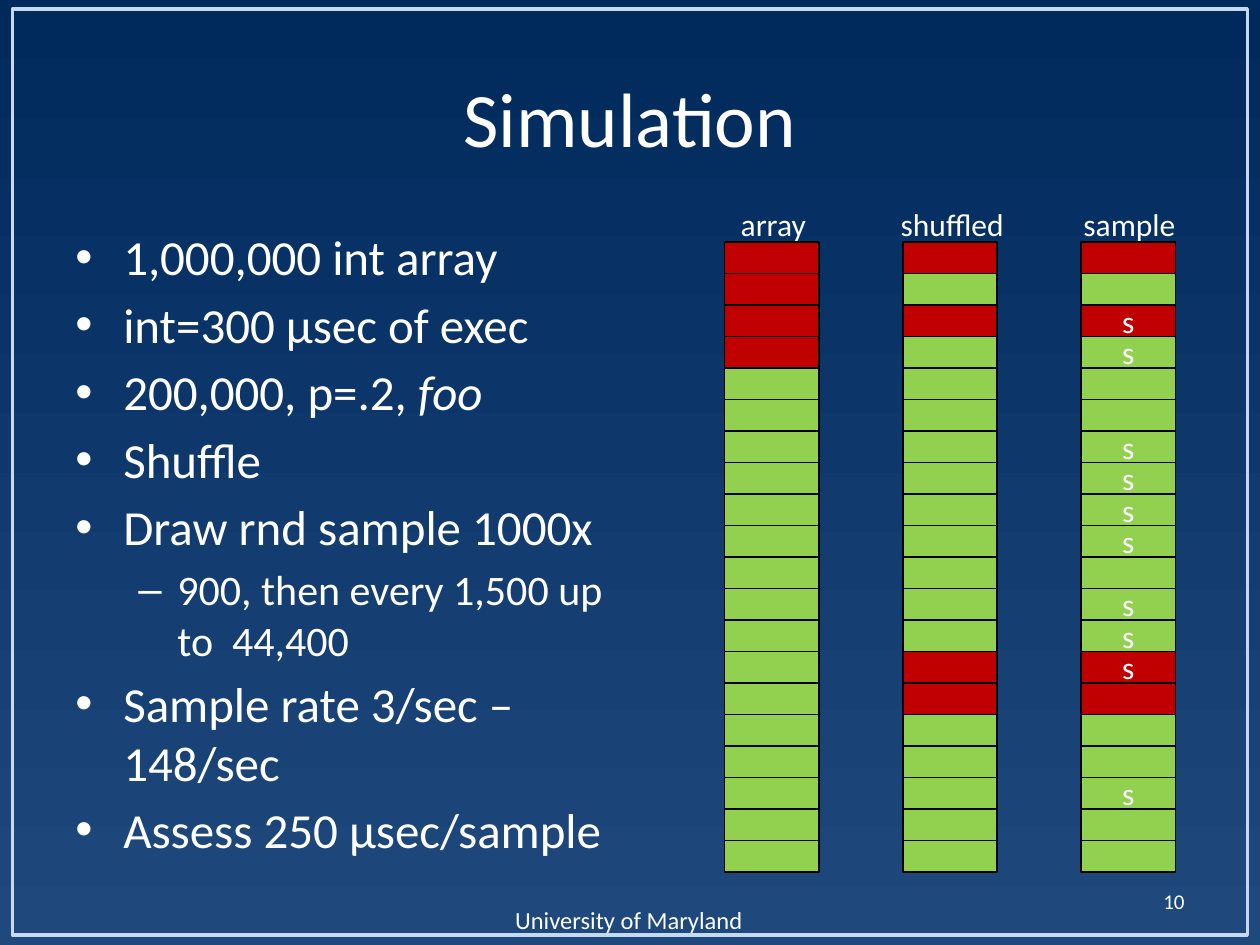
"""Build the Simulation slide: bullets beside three columns of array cells."""
from lxml import etree
from pptx import Presentation
from pptx.dml.color import RGBColor
from pptx.enum import shapes, text
from pptx.oxml import ns
from pptx.util import Inches, Pt

WHITE = RGBColor(0xFF, 0xFF, 0xFF)
BLACK = RGBColor(0, 0, 0)
RED = RGBColor(0xC0, 0, 0)
GREEN = RGBColor(0x92, 0xD0, 0x50)
FRAME = RGBColor(0xC6, 0xD9, 0xF1)
NAVY = RGBColor(0, 0x29, 0x5C)
BLUE = RGBColor(0x1F, 0x49, 0x7D)
LEFT, MID, RIGHT = text.PP_ALIGN.LEFT, text.PP_ALIGN.CENTER, text.PP_ALIGN.RIGHT
TOP, CENTER = text.MSO_ANCHOR.TOP, text.MSO_ANCHOR.MIDDLE

BULLETS = [
    (0, ["1,000,000 int array"]),
    (0, ["int=300 µsec of exec"]),
    (0, ["200,000, p=.2, ", "foo"]),
    (0, ["Shuffle"]),
    (0, ["Draw rnd sample 1000x"]),
    (1, ["900, then every 1,500 up to  44,400"]),
    (0, ["Sample rate 3/sec – 148/sec"]),
    (0, ["Assess 250 µsec/sample"]),
]
LEVELS = [("•", 0.38, 0.38, 28, 5), ("–", 0.81, 0.31, 24, 4.5)]
MIXED = {0, 2, 13, 14}
DRAWN = {2, 3, 6, 7, 8, 9, 11, 12, 13, 17}
COLUMNS = [
    ("array", 5.78, 0.72, {0, 1, 2, 3}, set()),
    ("shuffled", 7.05, 1.04, MIXED, set()),
    ("sample", 8.5, 0.94, MIXED, DRAWN),
]
ROWS, CELL_W, CELL_H, PITCH = 20, 0.75, 0.25, 1.415
GRID_X, GRID_Y = 5.75, 1.92


def add_run(para, words, size, italic=False):
    run = para.add_run()
    run.text = words
    font = run.font
    font.name, font.size, font.italic = "Calibri", Pt(size), italic
    font.color.rgb = WHITE


def add_label(slide, box, words, size, align=LEFT, anchor=TOP, wrap=True):
    frame = slide.shapes.add_textbox(*map(Inches, box)).text_frame
    frame.word_wrap, frame.vertical_anchor = wrap, anchor
    if not wrap:
        frame.auto_size = text.MSO_AUTO_SIZE.SHAPE_TO_FIT_TEXT
    para = frame.paragraphs[0]
    para.alignment = align
    add_run(para, words, size)


def add_rect(slide, box, line, width, fill=None):
    rect = slide.shapes.add_shape(shapes.MSO_SHAPE.RECTANGLE, *map(Inches, box))
    rect.shadow.inherit = False
    rect.line.color.rgb, rect.line.width = line, Pt(width)
    if fill is None:
        rect.fill.background()
    else:
        rect.fill.solid()
        rect.fill.fore_color.rgb = fill
    return rect


def add_bullets(slide):
    box = slide.shapes.add_textbox(*map(Inches, (0.5, 1.75, 4.42, 4.95)))
    frame = box.text_frame
    frame.word_wrap = True
    for i, (level, parts) in enumerate(BULLETS):
        mark, margin, hang, size, gap = LEVELS[level]
        para = frame.add_paragraph() if i else frame.paragraphs[0]
        props = para._p.get_or_add_pPr()
        props.set("marL", str(Inches(margin)))
        props.set("indent", str(-Inches(hang)))
        etree.SubElement(props, ns.qn("a:buFont"), typeface="Arial")
        etree.SubElement(props, ns.qn("a:buChar"), char=mark)
        para.level = level
        para.space_before = Pt(gap if i else 0)
        for words in parts:
            add_run(para, words, size, words == "foo")


def add_column(slide, x, reds, drawn):
    for row in range(ROWS):
        box = (x, GRID_Y + row * CELL_H, CELL_W, CELL_H)
        cell = add_rect(slide, box, BLACK, 1, RED if row in reds else GREEN)
        if row in drawn:
            frame = cell.text_frame
            frame.vertical_anchor = CENTER
            frame.paragraphs[0].alignment = MID
            add_run(frame.paragraphs[0], "s", 18)


def main():
    deck = Presentation()
    deck.slide_width, deck.slide_height = Inches(10), Inches(7.5)
    slide = deck.slides.add_slide(deck.slide_layouts[6])
    back = slide.background.fill
    back.gradient()
    back.gradient_angle = 90
    for stop, color in zip(back.gradient_stops, (BLUE, NAVY)):
        stop.color.rgb = color

    add_rect(slide, (0.1, 0.07, 9.8, 7.35), FRAME, 2)
    add_label(slide, (3.99, 7.13, 2.03, 0.34), "University of Maryland", 14, wrap=False)
    add_label(slide, (0.5, 0.3, 9, 1.25), "Simulation", 44, MID, CENTER)
    add_bullets(slide)
    for i, (name, left, width, reds, drawn) in enumerate(COLUMNS):
        add_label(slide, (left, 1.58, width, 0.4), name, 18, wrap=False)
        add_column(slide, GRID_X + i * PITCH, reds, drawn)
    add_label(slide, (7.17, 6.95, 2.33, 0.4), "10", 12, RIGHT, CENTER)
    deck.save("out.pptx")


if __name__ == "__main__":
    main()
